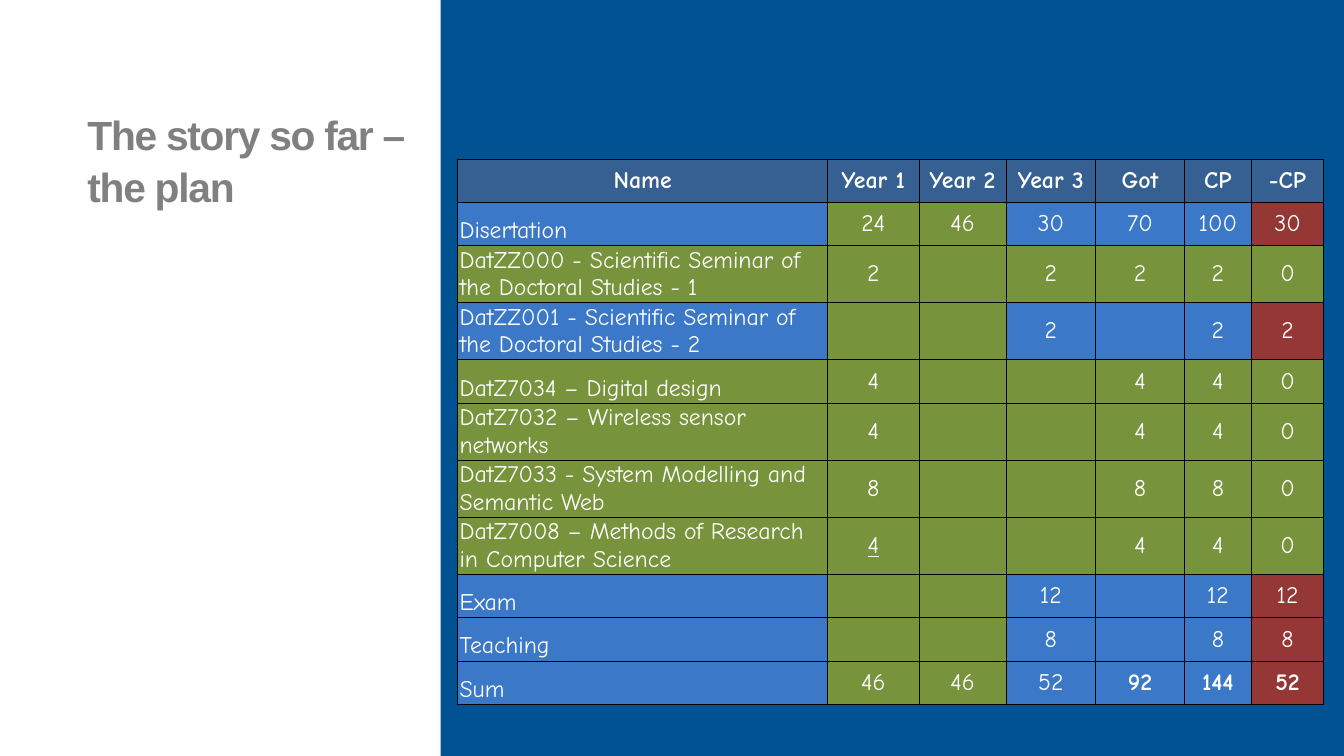
from lxml import etree
from pptx import Presentation
from pptx.dml.color import RGBColor
from pptx.enum.shapes import MSO_SHAPE
from pptx.enum.text import MSO_ANCHOR, MSO_AUTO_SIZE, PP_ALIGN
from pptx.oxml.ns import qn
from pptx.util import Inches, Pt

RECTANGLE = MSO_SHAPE.RECTANGLE
TOP, MIDDLE, BOTTOM = MSO_ANCHOR.TOP, MSO_ANCHOR.MIDDLE, MSO_ANCHOR.BOTTOM
LEFT, CENTER = PP_ALIGN.LEFT, PP_ALIGN.CENTER
NO_AUTOFIT = MSO_AUTO_SIZE.NONE

SLIDE_WIDTH, SLIDE_HEIGHT = Inches(21.99), Inches(12.37)
TITLE_ONLY_LAYOUT = 5

WHITE = RGBColor(0xFF, 0xFF, 0xFF)
TITLE_GREY = RGBColor(0x80, 0x80, 0x80)
PANEL_BLUE = RGBColor(0x00, 0x52, 0x93)
HEADER_BLUE = RGBColor(0x37, 0x60, 0x92)
PLANNED_BLUE = RGBColor(0x3C, 0x78, 0xC8)
DONE_GREEN = RGBColor(0x77, 0x93, 0x3C)
MISSING_RED = RGBColor(0x95, 0x37, 0x35)
BORDER_BLACK = RGBColor(0x00, 0x00, 0x00)

PANEL_LEFT = 32.79
COLUMN_SHARES = [27.51, 6.82, 6.46, 6.68, 6.59, 5, 5.37]
ONE_LINE_ROW, TWO_LINE_ROW = 5.74, 7.52
WRAP_LENGTH = 30

HEADER = ["Name", "Year 1", "Year 2", "Year 3", "Got", "CP", "-CP"]
COURSES = [
    ["Disertation", "24", "46", "30", "70", "100", "30"],
    ["DatZZ000 - Scientific Seminar of the Doctoral Studies - 1", "2", "", "2", "2", "2", "0"],
    ["DatZZ001 - Scientific Seminar of the Doctoral Studies - 2", "", "", "2", "", "2", "2"],
    ["DatZ7034 – Digital design", "4", "", "", "4", "4", "0"],
    ["DatZ7032 – Wireless sensor networks", "4", "", "", "4", "4", "0"],
    ["DatZ7033 - System Modelling and Semantic Web", "8", "", "", "8", "8", "0"],
    ["DatZ7008 – Methods of Research in Computer Science", "4", "", "", "4", "4", "0"],
    ["Exam", "", "", "12", "", "12", "12"],
    ["Teaching", "", "", "8", "", "8", "8"],
    ["Sum", "46", "46", "52", "92", "144", "52"],
]
NAME_COLUMN, YEAR_1, YEAR_2, GOT, MISSING = 0, 1, 2, 4, 6


def across(percent):
    return round(SLIDE_WIDTH * percent / 100)


def down(percent):
    return round(SLIDE_HEIGHT * percent / 100)


def add_panel(slide):
    left = across(PANEL_LEFT)
    panel = slide.shapes.add_shape(RECTANGLE, left, 0, SLIDE_WIDTH - left, SLIDE_HEIGHT)
    panel.shadow.inherit = False
    panel.fill.solid()
    panel.fill.fore_color.rgb = PANEL_BLUE
    panel.line.fill.background()


def style_run(run, font_name, size, color, bold):
    font = run.font
    font.name, font.size, font.bold = font_name, Pt(size), bold
    font.color.rgb = color


def write_title(slide, text):
    title = slide.shapes.title
    title.left, title.top = across(6.05), down(13.82)
    title.width, title.height = across(25.78), down(23.61)
    frame = title.text_frame
    frame.word_wrap, frame.auto_size = True, NO_AUTOFIT
    frame.vertical_anchor = TOP
    paragraph = frame.paragraphs[0]
    paragraph.alignment, paragraph.line_spacing = LEFT, 1.05
    run = paragraph.add_run()
    run.text = text
    style_run(run, "Arial", 48, TITLE_GREY, True)
    run._r.get_or_add_rPr().set("spc", "-150")


def draw_borders(cell):
    """Outline the cell; call before filling, as borders come first in the XML."""
    properties = cell._tc.get_or_add_tcPr()
    for side in ("a:lnL", "a:lnR", "a:lnT", "a:lnB"):
        line = etree.SubElement(properties, qn(side), w=str(Pt(1)))
        fill = etree.SubElement(line, qn("a:solidFill"))
        etree.SubElement(fill, qn("a:srgbClr"), val=str(BORDER_BLACK))


def course_color(course, column):
    if course[MISSING] == "0" or column in (YEAR_1, YEAR_2):
        return DONE_GREEN
    return MISSING_RED if column == MISSING else PLANNED_BLUE


def fill_cell(cell, text, color, is_name=False, bold=False, underline=False):
    draw_borders(cell)
    cell.fill.solid()
    cell.fill.fore_color.rgb = color
    cell.margin_left = cell.margin_right = Inches(0.03)
    cell.margin_top = cell.margin_bottom = Inches(0.02)
    cell.vertical_anchor = BOTTOM if is_name else MIDDLE
    if text:
        paragraph = cell.text_frame.paragraphs[0]
        paragraph.alignment = LEFT if is_name else CENTER
        run = paragraph.add_run()
        run.text = text
        style_run(run, "Comic Neue", 28, WHITE, bold)
        run.font.underline = underline


def add_course_table(slide):
    heights = [ONE_LINE_ROW] + [
        TWO_LINE_ROW if len(course[NAME_COLUMN]) > WRAP_LENGTH else ONE_LINE_ROW
        for course in COURSES
    ]
    table = slide.shapes.add_table(
        len(heights), len(HEADER), across(34.06), down(21.02),
        across(sum(COLUMN_SHARES)), down(sum(heights)),
    ).table
    table.first_row = table.horz_banding = False
    for column, share in zip(table.columns, COLUMN_SHARES):
        column.width = across(share)
    for row, share in zip(table.rows, heights):
        row.height = down(share)

    for column, text in enumerate(HEADER):
        fill_cell(table.cell(0, column), text, HEADER_BLUE, bold=True)
    for row, course in enumerate(COURSES, start=1):
        name = course[NAME_COLUMN]
        for column, text in enumerate(course):
            fill_cell(
                table.cell(row, column), text, course_color(course, column),
                is_name=column == NAME_COLUMN,
                bold=name == "Sum" and column >= GOT,
                underline=name.startswith("DatZ7008") and column == YEAR_1,
            )


def main():
    presentation = Presentation()
    presentation.slide_width, presentation.slide_height = SLIDE_WIDTH, SLIDE_HEIGHT
    slide = presentation.slides.add_slide(presentation.slide_layouts[TITLE_ONLY_LAYOUT])
    add_panel(slide)
    write_title(slide, "The story so far – the plan")
    add_course_table(slide)
    presentation.save("out.pptx")


if __name__ == "__main__":
    main()
